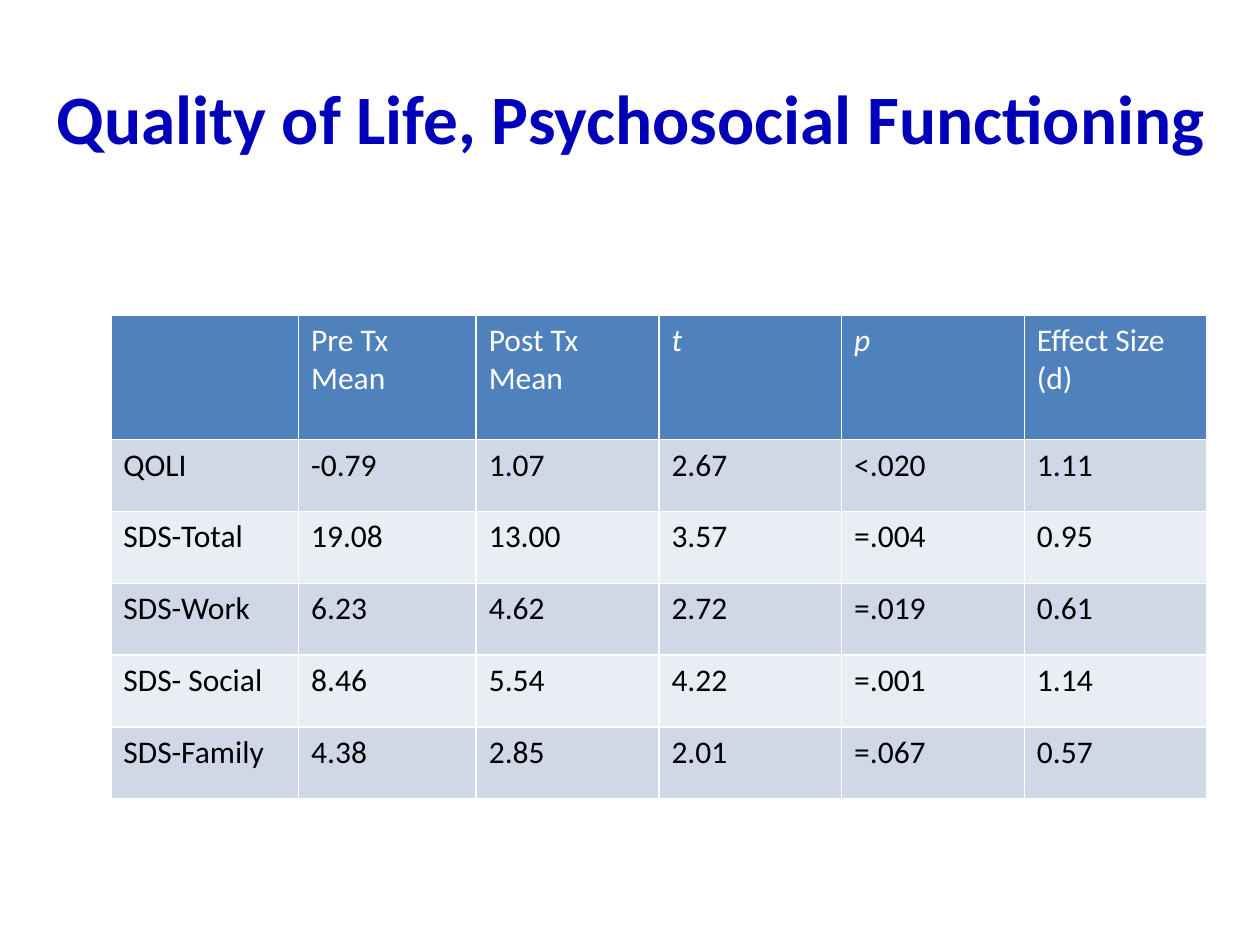
from dataclasses import dataclass

from lxml import etree
from pptx import Presentation
from pptx.dml.color import RGBColor
from pptx.enum.text import MSO_ANCHOR, PP_ALIGN
from pptx.oxml.ns import qn
from pptx.util import Inches, Pt

MIDDLE = MSO_ANCHOR.MIDDLE
CENTER = PP_ALIGN.CENTER
BLANK_LAYOUT = 6


@dataclass(frozen=True)
class Theme:
    font: str = "Calibri"
    title: str = "0000BA"
    header: str = "4F81BD"
    bands: tuple = ("D0D8E8", "E9EDF4")
    light: str = "FFFFFF"
    dark: str = "000000"
    title_size: float = 39.6
    table_size: float = 18
    border_width: float = 1


THEME = Theme()

TITLE = "Quality of Life, Psychosocial Functioning"
HEADERS = ["", "Pre Tx Mean", "Post Tx Mean", "t", "p", "Effect Size (d)"]
STATISTICS = ("t", "p")
RESULTS = [
    ["QOLI", "-0.79", "1.07", "2.67", "<.020", "1.11"],
    ["SDS-Total", "19.08", "13.00", "3.57", "=.004", "0.95"],
    ["SDS-Work", "6.23", "4.62", "2.72", "=.019", "0.61"],
    ["SDS- Social", "8.46", "5.54", "4.22", "=.001", "1.14"],
    ["SDS-Family", "4.38", "2.85", "2.01", "=.067", "0.57"],
]
COLUMN_WIDTHS = [1.49, 1.41] + [1.45] * 4
ROW_HEIGHTS = [0.99] + [0.57] * len(RESULTS)


def style_font(font, size, color, bold=False, italic=False):
    font.name = THEME.font
    font.size = Pt(size)
    font.color.rgb = RGBColor.from_string(color)
    font.bold = bold
    font.italic = italic


def add_title(slide, left, top, width, height):
    box = slide.shapes.add_textbox(left, top, width, height)
    tf = box.text_frame
    tf.word_wrap = True
    tf.vertical_anchor = MIDDLE
    tf.text = TITLE
    p = tf.paragraphs[0]
    p.alignment = CENTER
    style_font(p.runs[0].font, THEME.title_size, THEME.title, bold=True)


def add_borders(cell):
    """Rule all four sides; borders must precede the fill in the cell XML."""
    tc_pr = cell._tc.get_or_add_tcPr()
    for index, side in enumerate(("lnL", "lnR", "lnT", "lnB")):
        line = etree.Element(qn(f"a:{side}"), w=str(Pt(THEME.border_width)))
        fill = etree.SubElement(line, qn("a:solidFill"))
        etree.SubElement(fill, qn("a:srgbClr"), val=THEME.light)
        tc_pr.insert(index, line)


def fill_cell(cell, text, fill, color, italic=False):
    cell.fill.solid()
    cell.fill.fore_color.rgb = RGBColor.from_string(fill)
    add_borders(cell)
    cell.text = text
    p = cell.text_frame.paragraphs[0]
    for r in p.runs:
        style_font(r.font, THEME.table_size, color, italic=italic)


def add_results_table(slide, left, top, width, height):
    table = slide.shapes.add_table(
        len(ROW_HEIGHTS), len(COLUMN_WIDTHS), left, top, width, height
    ).table
    for column, column_width in zip(table.columns, COLUMN_WIDTHS):
        column.width = Inches(column_width)
    for row, row_height in zip(table.rows, ROW_HEIGHTS):
        row.height = Inches(row_height)

    for col, text in enumerate(HEADERS):
        fill_cell(table.cell(0, col), text, THEME.header, THEME.light,
                  italic=text in STATISTICS)
    for row, values in enumerate(RESULTS):
        band = THEME.bands[row % len(THEME.bands)]
        for col, text in enumerate(values):
            fill_cell(table.cell(row + 1, col), text, band, THEME.dark)


def main():
    prs = Presentation()
    prs.slide_width = Inches(10)
    prs.slide_height = Inches(7.5)
    slide = prs.slides.add_slide(prs.slide_layouts[BLANK_LAYOUT])
    add_title(slide, Inches(0.26), Inches(0.3), Inches(9.5), Inches(1.25))
    add_results_table(slide, Inches(0.88), Inches(2.5),
                      Inches(sum(COLUMN_WIDTHS)), Inches(sum(ROW_HEIGHTS)))
    prs.save("out.pptx")


if __name__ == "__main__":
    main()
